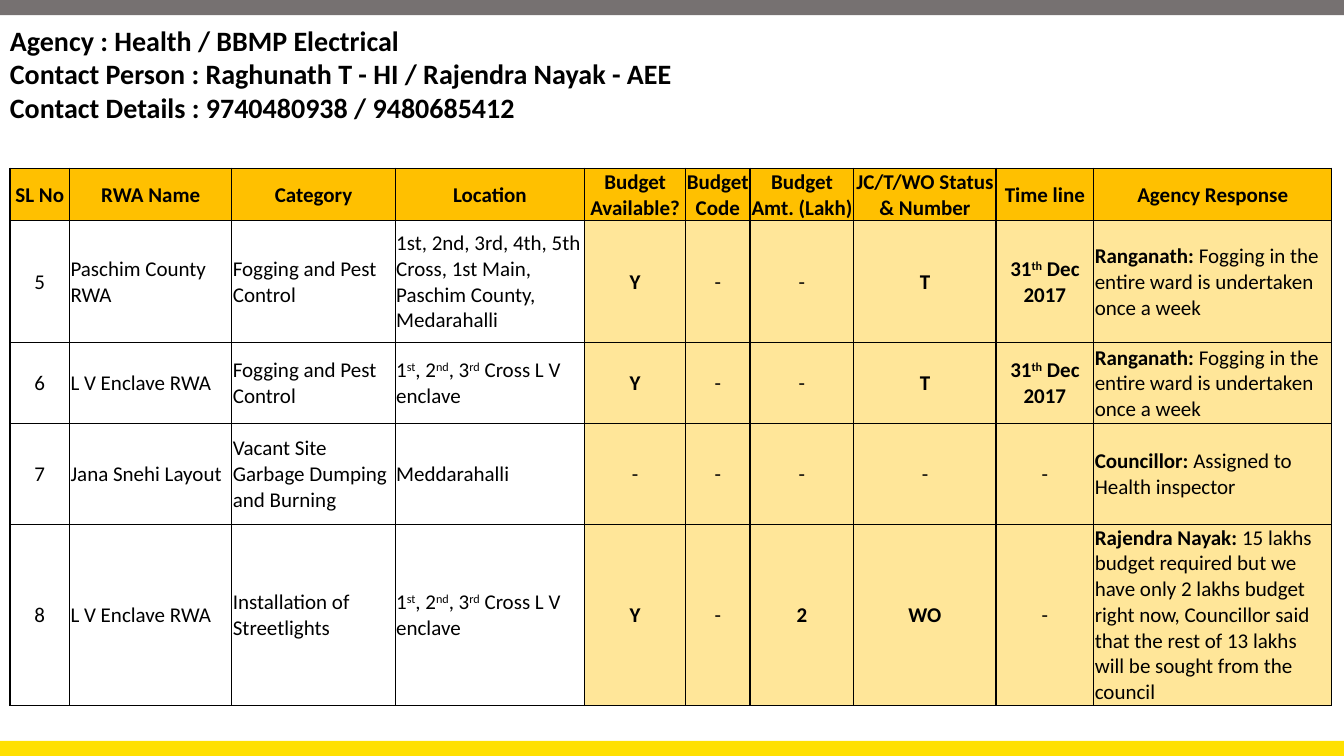
from lxml import etree
from pptx import Presentation
from pptx import util as u
from pptx.dml import color
from pptx.enum import shapes, text
from pptx.oxml import ns

CONTACT_LINES = [
    "Agency : Health / BBMP Electrical",
    "Contact Person : Raghunath T - HI / Rajendra Nayak - AEE",
    "Contact Details : 9740480938 / 9480685412",
]
HEADINGS = ["SL No", "RWA Name", "Category", "Location", "Budget Available?", "Budget Code",
            "Budget Amt. (Lakh)", "JC/T/WO Status & Number", "Time line", "Agency Response"]
PEST_CONTROL = "Fogging and Pest Control"
ENCLAVE_CROSSES = "1^st^, 2^nd^, 3^rd^ Cross L V enclave"
FOGGING_DATE = "31^th^ Dec 2017"
FOGGING_RESPONSE = "Ranganath: |Fogging in the entire ward is undertaken once a week"
REQUESTS = [
    ["5", "Paschim County RWA", PEST_CONTROL,
     "1st, 2nd, 3rd, 4th, 5th Cross, 1st Main, Paschim County, Medarahalli",
     "Y", "-", "-", "T", FOGGING_DATE, FOGGING_RESPONSE],
    ["6", "L V Enclave RWA", PEST_CONTROL, ENCLAVE_CROSSES,
     "Y", "-", "-", "T", FOGGING_DATE, FOGGING_RESPONSE],
    ["7", "Jana Snehi Layout", "Vacant Site Garbage Dumping and Burning", "Meddarahalli",
     "-", "-", "-", "-", "-", "Councillor: |Assigned to Health inspector"],
    ["8", "L V Enclave RWA", "Installation of Streetlights", ENCLAVE_CROSSES,
     "Y", "-", "2", "WO", "-",
     "Rajendra Nayak: |15 lakhs budget required but we have only 2 lakhs budget right now, "
     "Councillor said that the rest of 13 lakhs will be sought from the council"],
]
COLUMN_WIDTHS = [0.59, 1.61, 1.62, 1.88, 1, 0.64, 1.03, 1.41, 0.97, 2.36]
ROW_HEIGHTS = [0.48, 1.21, 0.8, 1, 1.79]
FIRST_AGENCY_COLUMN = 4
RESPONSE_COLUMN = 9


def rgb(value):
    """Turn a hex string into a colour."""
    return color.RGBColor.from_string(value)


def style_font(font, size, bold):
    """Give a font the look shared by all text."""
    font.name = "Calibri"
    font.size = u.Pt(size)
    font.bold = bold
    font.color.rgb = rgb("000000")


def add_band(slide, left, top, width, height, fill):
    """Draw a plain coloured band along a slide edge."""
    band = slide.shapes.add_shape(shapes.MSO_SHAPE.RECTANGLE, *map(u.Inches, (left, top, width, height)))
    band.shadow.inherit = False
    band.fill.solid()
    band.fill.fore_color.rgb = rgb(fill)
    band.line.fill.background()


def add_contacts(slide, left, top, width, height):
    """Write the agency and its contacts."""
    frame = slide.shapes.add_textbox(*map(u.Inches, (left, top, width, height))).text_frame
    frame.word_wrap = True
    frame.text = "\n".join(CONTACT_LINES)
    for line in frame.paragraphs:
        style_font(line.runs[0].font, 20, True)


def add_borders(cell):
    """Outline a cell with thin black lines."""
    properties = cell._tc.get_or_add_tcPr()
    for position, side in enumerate(("lnL", "lnR", "lnT", "lnB")):
        border = etree.Element(ns.qn("a:" + side), w=str(u.Pt(1)))
        fill = etree.SubElement(border, ns.qn("a:solidFill"))
        etree.SubElement(fill, ns.qn("a:srgbClr"), val="000000")
        properties.insert(position, border)


def write_marked(paragraph, content, bold):
    """Write text whose parts between carets are raised."""
    for index, part in enumerate(content.split("^")):
        run = paragraph.add_run()
        run.text = part
        style_font(run.font, 15, bold)
        if index % 2:
            run._r.get_or_add_rPr().set("baseline", "30000")


def fill_cell(cell, content, row, column):
    """Write and format one cell by its place in the table."""
    is_heading = row == 0
    is_agency = column >= FIRST_AGENCY_COLUMN
    is_centred = is_heading or column == 0 or FIRST_AGENCY_COLUMN <= column < RESPONSE_COLUMN
    cell.margin_left = cell.margin_right = cell.margin_top = u.Inches(0.01)
    cell.margin_bottom = 0
    cell.vertical_anchor = text.MSO_ANCHOR.MIDDLE
    cell.fill.solid()
    cell.fill.fore_color.rgb = rgb("FFC000" if is_heading else "FFE699" if is_agency else "FFFFFF")
    add_borders(cell)
    paragraph = cell.text_frame.paragraphs[0]
    paragraph.alignment = text.PP_ALIGN.CENTER if is_centred else text.PP_ALIGN.LEFT
    lead, _, rest = content.partition("|")
    write_marked(paragraph, lead, is_heading or (is_agency and lead != "-"))
    if rest:
        write_marked(paragraph, rest, False)


def add_requests(slide, left, top):
    """Build the table of requests and agency responses."""
    rows = [HEADINGS] + REQUESTS
    size = sum(COLUMN_WIDTHS), sum(ROW_HEIGHTS)
    table = slide.shapes.add_table(len(rows), len(HEADINGS), *map(u.Inches, (left, top, *size))).table
    table.first_row = table.horz_banding = False
    for column, width in zip(table.columns, COLUMN_WIDTHS):
        column.width = u.Inches(width)
    for row, height in zip(table.rows, ROW_HEIGHTS):
        row.height = u.Inches(height)
    for row, contents in enumerate(rows):
        for column, content in enumerate(contents):
            fill_cell(table.cell(row, column), content, row, column)


def main():
    """Build and save the slide."""
    deck = Presentation()
    deck.slide_width, deck.slide_height = u.Inches(13.33), u.Inches(7.5)
    slide = deck.slides.add_slide(deck.slide_layouts[6])
    add_band(slide, 0, 7.35, 13.33, 0.15, "FFE000")
    add_band(slide, 0, 0, 13.33, 0.15, "767171")
    add_requests(slide, 0.1, 1.67)
    add_contacts(slide, 0, 0.18, 13.33, 1.11)
    deck.save("out.pptx")


if __name__ == "__main__":
    main()
